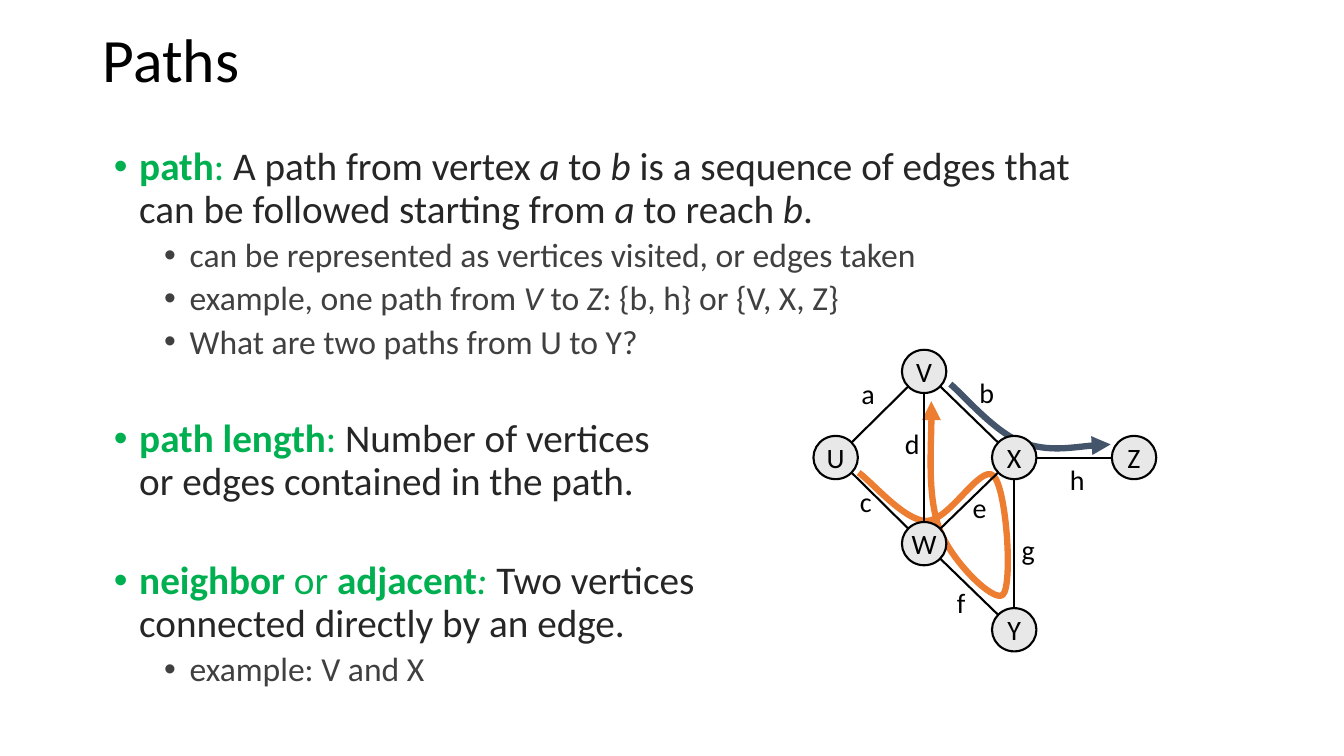
from dataclasses import dataclass
from math import hypot

from lxml.etree import SubElement
from pptx import Presentation
from pptx.dml.color import RGBColor
from pptx.enum.shapes import MSO_CONNECTOR as Connector, MSO_SHAPE as Preset
from pptx.enum.text import MSO_ANCHOR as Anchor, MSO_AUTO_SIZE as AutoSize, PP_ALIGN as Align
from pptx.oxml.ns import qn
from pptx.util import Cm, Pt

FONT = "Calibri"
BLACK, GREEN, DARK, GRAY = "000000", "00B050", "262626", "404040"
NODE_FILL, ORANGE, SLATE = "E8E8E8", "ED7D31", "44546A"
NODE_WIDTH, NODE_HEIGHT = 1.12, 1.09
LEFT, MIDDLE, RIGHT, FAR = 21.06, 23.29, 25.56, 28.58
TOP, ROW_STEP = 9.36, 2.17


@dataclass
class Span:
    text: str
    color: str = DARK
    bold: bool = False
    italic: bool = False


@dataclass
class Bullet:
    spans: list[Span]
    level: int = 0
    before: float = 10


@dataclass
class Vertex:
    x: float
    row: int

    @property
    def y(self) -> float:
        return TOP + self.row * ROW_STEP


@dataclass
class Edge:
    label: str
    start: str
    end: str
    label_x: float
    label_y: float


@dataclass
class Route:
    color: str
    points: list[tuple[float, float]]


def term(text: str, bold: bool = True, italic: bool = False) -> Span:
    return Span(text, GREEN, bold, italic)


def var(text: str, color: str = DARK) -> Span:
    return Span(text, color, italic=True)


def detail(*spans: Span) -> Bullet:
    return Bullet(list(spans), 1, 5)


BULLETS = [
    Bullet([term("path"), term(": ", False), Span("A path from vertex "), var("a"),
            Span(" to "), var("b"),
            Span(" is a sequence of edges that can be followed starting from "),
            var("a"), Span(" to reach "), var("b"), Span(".")]),
    detail(Span("can be represented as vertices visited, or edges taken", GRAY)),
    detail(Span("example, one path from ", GRAY), var("V", GRAY), Span(" to ", GRAY),
           var("Z", GRAY), Span(": {b, h} or {V, X, Z}", GRAY)),
    detail(Span("What are two paths from U to Y?", GRAY)),
    Bullet([term("path length"), term(": ", False),
            Span("Number of vertices\nor edges contained in the path.")], before=41),
    Bullet([term("neighbor "), term("or ", False), term("adjacent"), term(": ", False, True),
            Span("Two vertices\nconnected directly by an edge.")], before=41),
    detail(Span("example: V and X", GRAY)),
]

VERTICES = {
    "X": Vertex(RIGHT, 1), "U": Vertex(LEFT, 1), "V": Vertex(MIDDLE, 0),
    "W": Vertex(MIDDLE, 2), "Z": Vertex(FAR, 1), "Y": Vertex(RIGHT, 3),
}

EDGES = [
    Edge("a", "V", "U", 21.88, 9.92), Edge("b", "V", "X", 24.87, 9.89),
    Edge("c", "W", "U", 21.82, 12.64), Edge("d", "V", "W", 22.99, 11.16),
    Edge("e", "W", "X", 24.69, 12.79), Edge("f", "W", "Y", 24.22, 15.18),
    Edge("g", "X", "Y", 25.91, 13.83), Edge("h", "X", "Z", 27.15, 12.08),
]

ROUTES = [
    Route(ORANGE, [(21.64, 11.91), (22, 12.17), (22.78, 13.11), (23.34, 13.13),
                   (23.93, 13.13), (24.71, 11.68), (25.04, 11.99),
                   (25.37, 12.32), (25.53, 14.76), (25.27, 14.99),
                   (25.04, 15.19), (23.95, 14.12), (23.67, 13.31),
                   (23.37, 12.5), (23.5, 10.64), (23.47, 10.11)]),
    Route(SLATE, [(23.95, 9.68), (24.26, 9.93), (25.07, 10.9), (25.76, 11.15),
                  (26.44, 11.4), (27.53, 11.2), (27.99, 11.2)]),
]


def rgb(color: str) -> RGBColor:
    return RGBColor.from_string(color)


def style_font(font, size: float, color: str) -> None:
    font.name, font.size = FONT, Pt(size)
    font.color.rgb = rgb(color)


def style_line(line, color: str, width: float) -> None:
    line.color.rgb = rgb(color)
    line.width = Pt(width)


def center_text(frame, text: str) -> None:
    frame.margin_left = frame.margin_right = frame.margin_top = frame.margin_bottom = 0
    frame.word_wrap = False
    frame.vertical_anchor = Anchor.MIDDLE
    frame.text = text
    frame.paragraphs[0].alignment = Align.CENTER
    style_font(frame.paragraphs[0].runs[0].font, 20, BLACK)


def draw_title(title) -> None:
    title.left, title.top, title.width, title.height = Cm(2.34), Cm(0.53), Cm(29.21), Cm(2.11)
    frame = title.text_frame
    frame.text = "Paths"
    frame.auto_size = AutoSize.NONE
    frame.vertical_anchor = Anchor.MIDDLE
    heading = frame.paragraphs[0]
    heading.alignment, heading.line_spacing = Align.LEFT, 0.9
    style_font(heading.runs[0].font, 44, BLACK)


def write_bullet(paragraph, bullet: Bullet, first: bool) -> None:
    properties = paragraph._p.get_or_add_pPr()
    properties.set("marL", str(Cm(0.64 + 1.27 * bullet.level)))
    properties.set("indent", str(-Cm(0.64)))
    SubElement(properties, qn("a:buFont")).set("typeface", "Arial")
    SubElement(properties, qn("a:buChar")).set("char", "•")
    paragraph.level = bullet.level
    paragraph.line_spacing = 0.9
    paragraph.space_before = Pt(0 if first else bullet.before)
    for span in bullet.spans:
        for number, line in enumerate(span.text.split("\n")):
            if number:
                paragraph.add_line_break()
            run = paragraph.add_run()
            run.text = line
            style_font(run.font, 24 if bullet.level else 28, span.color)
            run.font.bold, run.font.italic = span.bold, span.italic


def draw_definitions(shapes) -> None:
    frame = shapes.add_textbox(Cm(2.62), Cm(3.58), Cm(25.4), Cm(15.44)).text_frame
    frame.word_wrap = True
    for index, bullet in enumerate(BULLETS):
        paragraph = frame.add_paragraph() if index else frame.paragraphs[0]
        write_bullet(paragraph, bullet, index == 0)


def draw_route(shapes, route: Route) -> None:
    (start, *rest) = [(Cm(x), Cm(y)) for x, y in route.points]
    builder = shapes.build_freeform(*start)
    builder.add_line_segments(rest, close=False)
    curve = builder.convert_to_shape()
    curve.shadow.inherit = False
    curve.fill.background()
    style_line(curve.line, route.color, 4.5)
    outline = next(curve._element.iter(qn("a:path")))
    segments = outline.findall(qn("a:lnTo"))
    for first in range(0, len(segments), 3):
        bezier = SubElement(outline, qn("a:cubicBezTo"))
        for segment in segments[first:first + 3]:
            bezier.append(segment[0])
            outline.remove(segment)
    ending = SubElement(curve._element.spPr.find(qn("a:ln")), qn("a:tailEnd"))
    ending.set("type", "triangle")


def draw_vertex(shapes, name: str, vertex: Vertex) -> None:
    circle = shapes.add_shape(
        Preset.OVAL, Cm(vertex.x - NODE_WIDTH / 2), Cm(vertex.y - NODE_HEIGHT / 2),
        Cm(NODE_WIDTH), Cm(NODE_HEIGHT))
    circle.shadow.inherit = False
    circle.fill.solid()
    circle.fill.fore_color.rgb = rgb(NODE_FILL)
    style_line(circle.line, BLACK, 1.5)
    center_text(circle.text_frame, name)


def draw_edge(shapes, edge: Edge) -> None:
    start, end = VERTICES[edge.start], VERTICES[edge.end]
    dx, dy = end.x - start.x, end.y - start.y
    reach = hypot(dx, dy)
    off_x, off_y = NODE_WIDTH / 2 * dx / reach, NODE_HEIGHT / 2 * dy / reach
    link = shapes.add_connector(
        Connector.STRAIGHT, Cm(start.x + off_x), Cm(start.y + off_y),
        Cm(end.x - off_x), Cm(end.y - off_y))
    style_line(link.line, BLACK, 1.5)
    SubElement(link._element.spPr, qn("a:effectLst"))
    label = shapes.add_textbox(Cm(edge.label_x - 0.43), Cm(edge.label_y - 0.55), Cm(0.86), Cm(1.1))
    center_text(label.text_frame, edge.label)


def main() -> None:
    deck = Presentation()
    deck.slide_width, deck.slide_height = Cm(33.87), Cm(19.05)
    shapes = deck.slides.add_slide(deck.slide_layouts[5]).shapes
    draw_title(shapes.title)
    draw_definitions(shapes)
    for route in ROUTES:
        draw_route(shapes, route)
    for name, vertex in VERTICES.items():
        draw_vertex(shapes, name, vertex)
    for edge in EDGES:
        draw_edge(shapes, edge)
    deck.save("out.pptx")


if __name__ == "__main__":
    main()
